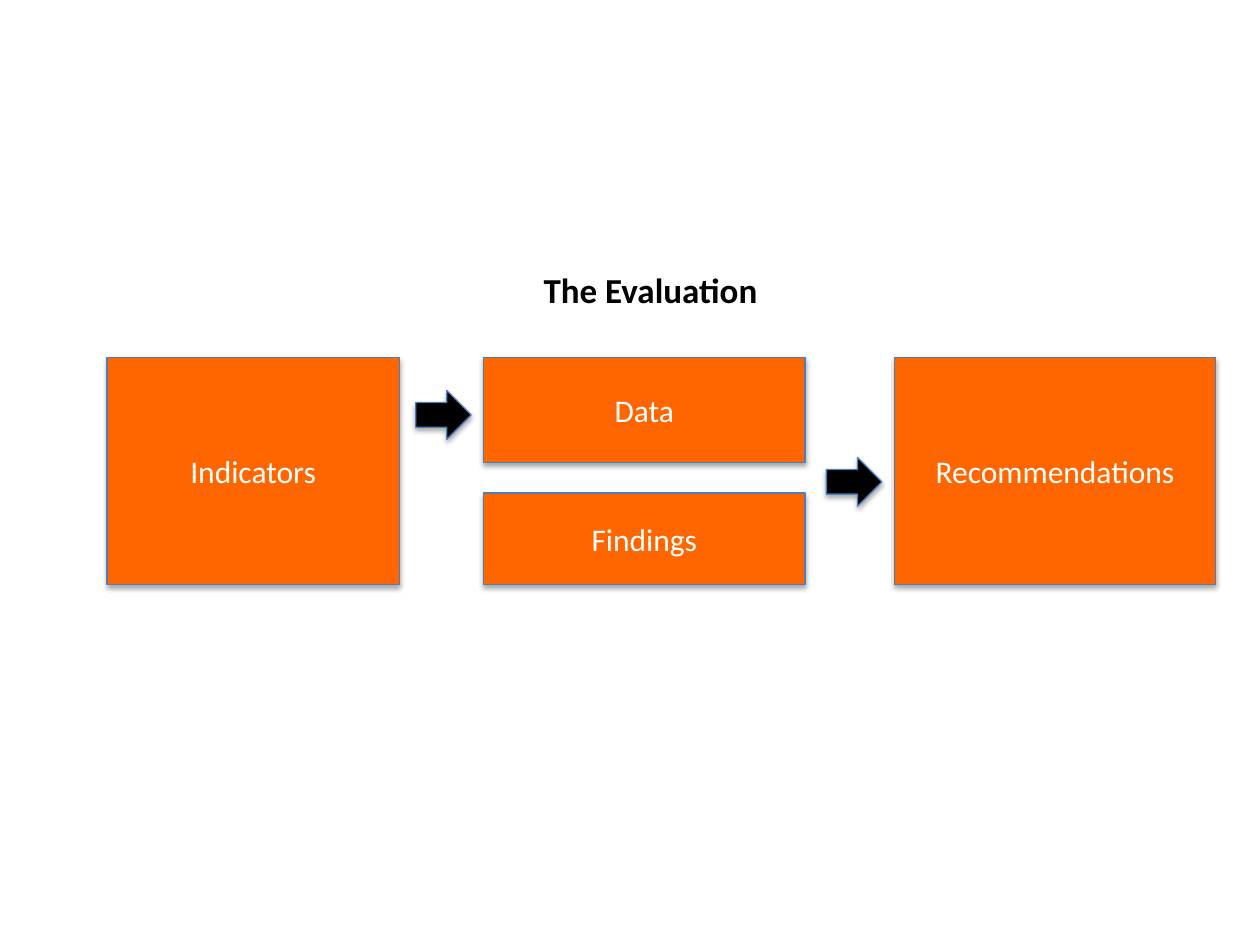
"""Build the evaluation flow slide: indicators, data and findings, recommendations."""
from lxml import etree
from pptx import Presentation
from pptx import util as u
from pptx.dml.color import RGBColor
from pptx.enum import shapes, text
from pptx.oxml import ns

COLOURS = {"box": "FF6600", "arrow": "000000", "edge": "4B7EBC",
           "label": "FFFFFF", "title": "000000", "shadow": "000000"}


def add_block(page, kind, left, top, width, height, fill):
    block = page.shapes.add_shape(kind, u.Cm(left), u.Cm(top), u.Cm(width), u.Cm(height))
    block.fill.solid()
    block.fill.fore_color.rgb = RGBColor.from_string(COLOURS[fill])
    block.line.color.rgb = RGBColor.from_string(COLOURS["edge"])
    block.line.width = u.Pt(0.75)
    block.shadow.inherit = False
    effects = block.element.spPr.find(ns.qn("a:effectLst"))
    shadow = etree.SubElement(effects, ns.qn("a:outerShdw"), blurRad=str(u.Pt(3.1)),
                              dist=str(u.Pt(1.8)), dir="5400000", rotWithShape="0")
    colour = etree.SubElement(shadow, ns.qn("a:srgbClr"), val=COLOURS["shadow"])
    etree.SubElement(colour, ns.qn("a:alpha"), val="35000")
    return block


def write(box, words, size, colour, bold=False):
    box.text_frame.text = words
    box.text_frame.word_wrap = True
    para = box.text_frame.paragraphs[0]
    para.alignment = text.PP_ALIGN.CENTER
    span = para.runs[0]
    span.font.name = "Calibri"
    span.font.size = u.Pt(size)
    span.font.bold = bold
    span.font.color.rgb = RGBColor.from_string(COLOURS[colour])


deck = Presentation()
deck.slide_width, deck.slide_height = u.Cm(25.4), u.Cm(19.05)
page = deck.slides.add_slide(deck.slide_layouts[6])

row_top, row_height = 7.21, 4.58
data_height, findings_height = 2.11, 1.85
findings_top = row_top + row_height - findings_height
stages = [
    ("Indicators", 2.16, row_top, 5.89, row_height),
    ("Recommendations", 18.03, row_top, 6.48, row_height),
    ("Data", 9.75, row_top, 6.48, data_height),
    ("Findings", 9.75, findings_top, 6.48, findings_height),
]
for label, left, top, width, height in stages:
    box = add_block(page, shapes.MSO_SHAPE.RECTANGLE, left, top, width, height, "box")
    box.text_frame.vertical_anchor = text.MSO_ANCHOR.MIDDLE
    write(box, label, 18, "label")

for left, top in [(8.38, 7.87), (16.66, 9.22)]:
    add_block(page, shapes.MSO_SHAPE.RIGHT_ARROW, left, top, 1.12, 0.99, "arrow")

title = page.shapes.add_textbox(u.Cm(8.81), u.Cm(5.28), u.Cm(8.61), u.Cm(1.12))
write(title, "The Evaluation", 20, "title", bold=True)
title.text_frame.auto_size = text.MSO_AUTO_SIZE.SHAPE_TO_FIT_TEXT

deck.save("out.pptx")
